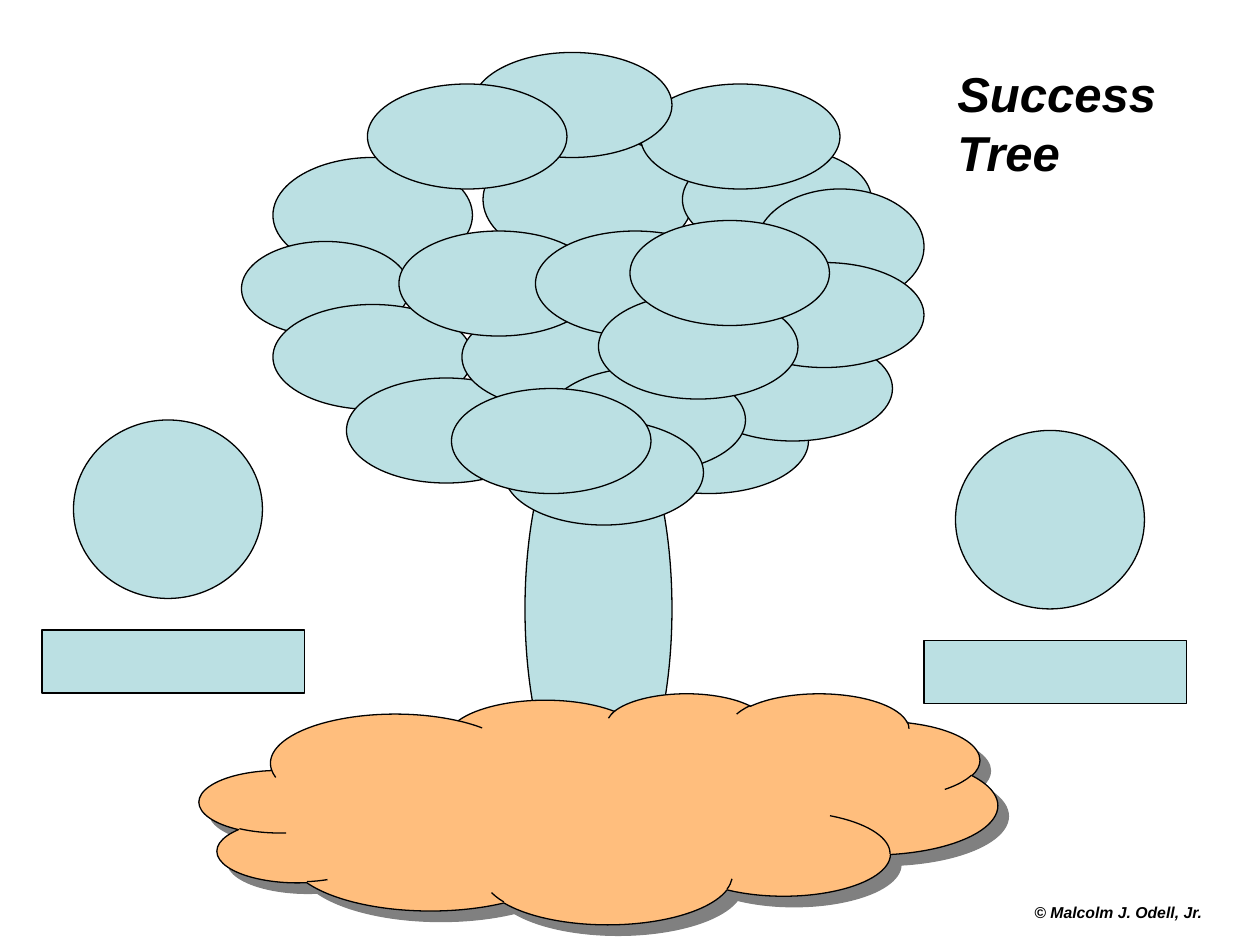
from dataclasses import dataclass
from typing import NamedTuple

from lxml.etree import SubElement
from pptx import Presentation
from pptx.dml.color import RGBColor as Color
from pptx.enum.shapes import MSO_SHAPE as Shape
from pptx.enum.text import MSO_ANCHOR as Anchor, PP_ALIGN as Align
from pptx.oxml.ns import qn
from pptx.util import Inches, Pt

COLUMNS, ROWS = 120, 90
CELL = Inches(10) / COLUMNS


@dataclass(frozen=True)
class Theme:
    font: str = "Arial"
    leaf: str = "BBE0E3"
    soil: str = "FFBE7D"
    ink: str = "000000"
    shade: str = "808080"
    title_size: float = 28
    credit_size: float = 9
    outline: float = 0.75
    shadow_distance: float = 8.5


THEME = Theme()


class Box(NamedTuple):
    left: float
    top: float
    width: float
    height: float

    def inner(self, left, top, width, height):
        return Box(self.left + left, self.top + top, width, height)

    def lengths(self):
        return [round(cells * CELL) for cells in self]


LEAF_SIZE = (19, 10)
CROWN_BACK = [(23, 8, 20, 12)]
CROWN_FRONT = [
    (3, 10, 19, 11), (42, 9, 18, 10), (49, 13, 16, 11), (0, 18, 16, 9),
    (3, 24), (10, 31), (21, 24), (15, 17), (28, 17), (35, 32), (43, 27),
    (46, 20), (29, 30), (38, 3), (22, 0), (12, 3), (25, 35), (20, 32),
    (34, 23), (37, 16),
]


def add_figure(page, kind, box, fill=THEME.leaf):
    figure = page.shapes.add_shape(kind, *box.lengths())
    figure.shadow.inherit = False
    figure.fill.solid()
    figure.fill.fore_color.rgb = Color.from_string(fill)
    figure.line.color.rgb = Color.from_string(THEME.ink)
    figure.line.width = Pt(THEME.outline)
    return figure


def add_text(page, box, text, size, align=Align.LEFT, anchor=Anchor.TOP, inset=0.0):
    frame = page.shapes.add_textbox(*box.lengths()).text_frame
    frame.word_wrap = True
    frame.vertical_anchor = anchor
    frame.margin_left = frame.margin_right = Inches(inset)
    frame.margin_top = frame.margin_bottom = Inches(inset / 2)
    para = frame.paragraphs[0]
    para.text = text
    para.alignment = align
    for span in para.runs:
        span.font.name = THEME.font
        span.font.size = Pt(size)
        span.font.bold = span.font.italic = True
        span.font.color.rgb = Color.from_string(THEME.ink)


def add_leaves(page, box, leaves):
    for left, top, *size in leaves:
        add_figure(page, Shape.OVAL, box.inner(left, top, *(size or LEAF_SIZE)))


def add_tree(page, box):
    add_leaves(page, box, CROWN_BACK)
    add_figure(page, Shape.OVAL, box.inner(27, 33, 14, 40))
    add_leaves(page, box, CROWN_FRONT)


def add_soil(page, box):
    soil = add_figure(page, Shape.CLOUD, box, fill=THEME.soil)
    effects = soil._element.spPr.find(qn("a:effectLst"))
    shadow = SubElement(
        effects, qn("a:outerShdw"), dist=str(Pt(THEME.shadow_distance)),
        dir=str(45 * 60000), algn="ctr", rotWithShape="0",
    )
    SubElement(shadow, qn("a:srgbClr"), val=THEME.shade)


def add_fruit_and_label(page, box):
    add_figure(page, Shape.OVAL, box.inner(3, 0, 18, 17))
    add_figure(page, Shape.RECTANGLE, box.inner(0, 20, box.width, 6))


def main():
    deck = Presentation()
    deck.slide_width = round(COLUMNS * CELL)
    deck.slide_height = round(ROWS * CELL)
    page = deck.slides.add_slide(deck.slide_layouts[6])

    add_text(page, Box(95, 86, 23, 2.3), "© Malcolm J. Odell, Jr.",
             THEME.credit_size, align=Align.CENTER)
    add_tree(page, Box(23, 5, 65, 73))
    add_soil(page, Box(19, 66, 76, 22))
    add_fruit_and_label(page, Box(88, 41, 25, 26))
    add_fruit_and_label(page, Box(4, 40, 25, 26))
    add_text(page, Box(90, 5, 22, 13.4), "Success\vTree",
             THEME.title_size, anchor=Anchor.MIDDLE, inset=0.1)
    deck.save("out.pptx")


if __name__ == "__main__":
    main()
